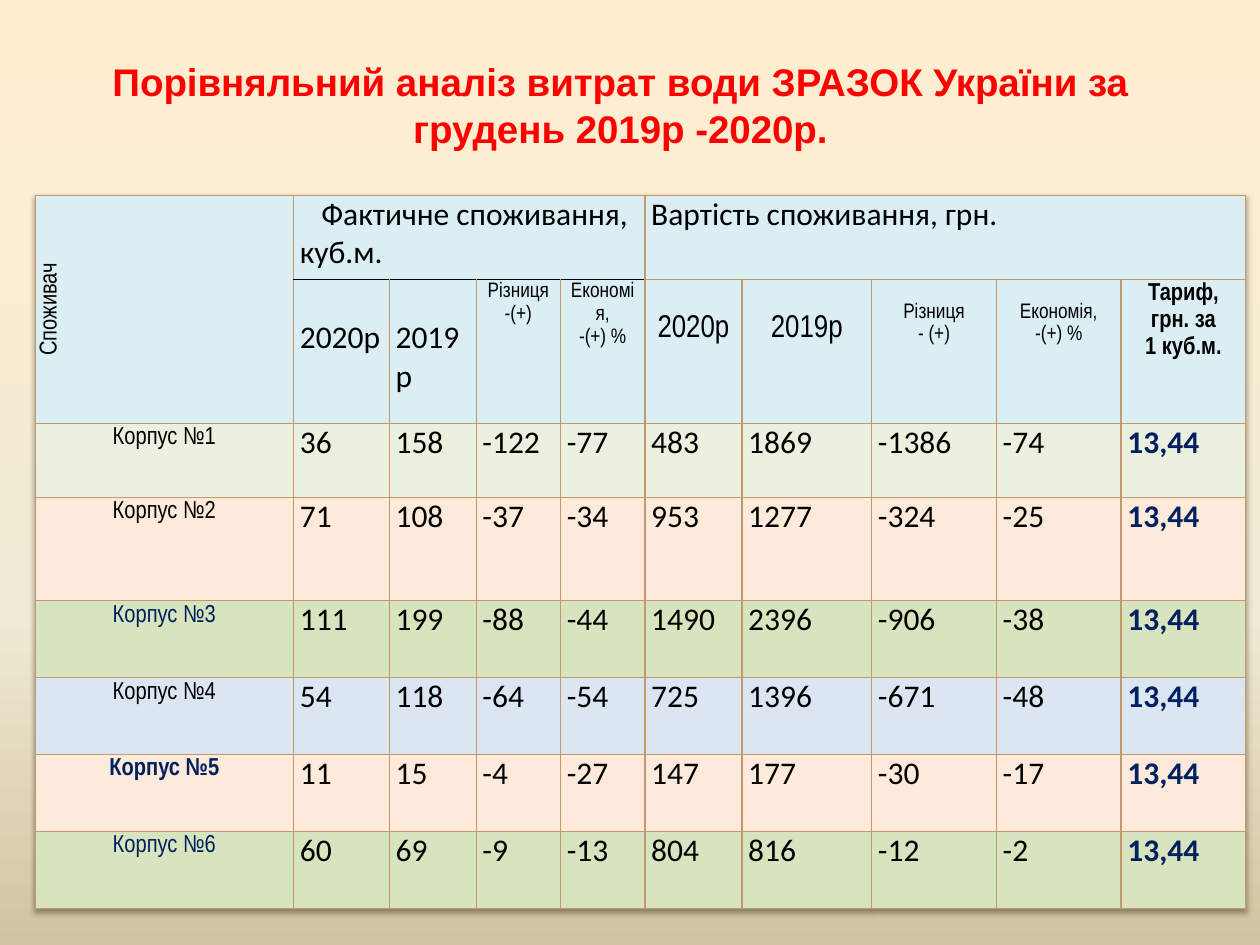
from copy import deepcopy

from lxml.etree import SubElement
from pptx import Presentation
from pptx.dml.color import RGBColor
from pptx.enum.text import MSO_ANCHOR, PP_ALIGN
from pptx.oxml import parse_xml
from pptx.oxml.ns import nsdecls, qn
from pptx.util import Inches, Pt

COLORS = {
    "title": "FF0000", "black": "000000", "navy": "002060", "border": "C3986D",
    "header": "DBEEF4", "pale_green": "EBF1DE", "peach": "FDEADA",
    "green": "D7E4BD", "blue": "DCE6F2",
}
BACKGROUND = [(0, "FFEFD1"), (0.65, "F0EBD5"), (1, "D1C39F")]
COLUMN_WIDTHS = [2.05, 0.76, 0.69, 0.67, 0.67, 0.77, 1.03, 0.99, 0.99, 0.99]
ROW_HEIGHTS = [0.67, 1.14, 0.59, 0.82] + [0.61] * 4
TARIFF = "13,44"

NARROW = {"font": "Arial Narrow", "align": PP_ALIGN.CENTER, "spacing": 1.15}
SUBHEADERS = [
    ("2020р", {"top": 0.31}),
    ("2019р", {"top": 0.31}),
    ("Різниця\n-(+)", {"size": 12, **NARROW}),
    ("Економія,\n-(+) %", {"size": 12, **NARROW}),
    ("2020р", {"top": 0.24, **NARROW}),
    ("2019р", {"top": 0.24, **NARROW}),
    ("Різниця\n- (+)", {"size": 12, "top": 0.16, **NARROW}),
    ("Економія,\n-(+) %", {"size": 12, "top": 0.16, **NARROW}),
    ("Тариф,\nгрн. за\n1 куб.м.", {"size": 14, "bold": True, **NARROW}),
]
BUILDINGS = [
    ("pale_green", "black", False, [36, 158, -122, -77, 483, 1869, -1386, -74]),
    ("peach", "black", False, [71, 108, -37, -34, 953, 1277, -324, -25]),
    ("green", "navy", False, [111, 199, -88, -44, 1490, 2396, -906, -38]),
    ("blue", "black", False, [54, 118, -64, -54, 725, 1396, -671, -48]),
    ("peach", "navy", True, [11, 15, -4, -27, 147, 177, -30, -17]),
    ("green", "navy", False, [60, 69, -9, -13, 804, 816, -12, -2]),
]


class SlideBuilder:
    def __init__(self, page):
        self.page = page

    def background(self, stops, angle):
        fill = self.page.background.fill
        fill.gradient()
        fill.gradient_angle = angle
        stop_list = next(self.page._element.iter(qn("a:gsLst")))
        while len(stop_list) < len(stops):
            stop_list.append(deepcopy(stop_list[0]))
        for stop, (position, color) in zip(fill.gradient_stops, stops):
            stop.position = position
            stop.color.rgb = RGBColor.from_string(color)

    def format_paragraph(self, paragraph, font, size, color, bold, align):
        paragraph.alignment = align
        for span in paragraph.runs:
            span.font.name = font
            span.font.size = Pt(size)
            span.font.bold = bold
            span.font.color.rgb = RGBColor.from_string(COLORS[color])

    def title(self, text, left, top, width, height):
        box = self.page.shapes.title
        box.left, box.top = Inches(left), Inches(top)
        box.width, box.height = Inches(width), Inches(height)
        frame = box.text_frame
        frame.text = text
        frame.word_wrap = True
        frame.vertical_anchor = MSO_ANCHOR.MIDDLE
        frame.margin_bottom = Inches(0.42)
        self.format_paragraph(frame.paragraphs[0], "Arial", 22, "title", True, PP_ALIGN.CENTER)

    def table(self, left, top, widths, heights):
        frame = self.page.shapes.add_table(
            len(heights), len(widths), Inches(left), Inches(top),
            Inches(sum(widths)), Inches(sum(heights)))
        table = frame.table
        table.first_row = table.horz_banding = False
        for column, width in zip(table.columns, widths):
            column.width = Inches(width)
        for row, height in zip(table.rows, heights):
            row.height = Inches(height)
        table._tbl.tblPr.insert(0, parse_xml(
            f'<a:effectLst {nsdecls("a")}><a:outerShdw blurRad="40000" dist="23000" '
            'dir="5400000" rotWithShape="0"><a:srgbClr val="000000">'
            '<a:alpha val="35000"/></a:srgbClr></a:outerShdw></a:effectLst>'))
        return table

    def borders(self, cell, black_side=None):
        properties = cell._tc.get_or_add_tcPr()
        for index, side in enumerate(("lnL", "lnR", "lnT", "lnB")):
            black = side == black_side
            line = properties.makeelement(qn(f"a:{side}"), {"w": str(Pt(1 if black else 0.79))})
            properties.insert(index, line)
            fill = SubElement(line, qn("a:solidFill"))
            color = COLORS["black" if black else "border"]
            SubElement(fill, qn("a:srgbClr"), val=color)

    def cell(self, cell, text, fill, font="Calibri", size=18, color="black", bold=False,
             align=PP_ALIGN.LEFT, spacing=None, top=0, black_side=None):
        cell.margin_left = cell.margin_right = Inches(0.05)
        cell.margin_top, cell.margin_bottom = Inches(top), 0
        cell.fill.solid()
        cell.fill.fore_color.rgb = RGBColor.from_string(COLORS[fill])
        self.borders(cell, black_side)
        cell.text_frame.text = text
        for paragraph in cell.text_frame.paragraphs:
            self.format_paragraph(paragraph, font, size, color, bold, align)
            paragraph.line_spacing = spacing


def fill_headers(builder, table):
    groups = {0: "Споживач", 1: "Фактичне споживання, куб.м.", 5: "Вартість споживання, грн."}
    for column in range(len(COLUMN_WIDTHS)):
        style = {"size": 14, **NARROW} if column == 0 else {}
        black_side = "lnB" if 1 <= column <= 4 else None
        builder.cell(table.cell(0, column), groups.get(column, ""), "header",
                     black_side=black_side, **style)
    builder.cell(table.cell(1, 0), "", "header")
    for column, (text, style) in enumerate(SUBHEADERS, 1):
        builder.cell(table.cell(1, column), text, "header",
                     black_side="lnT" if column <= 4 else None, **style)

    consumer = table.cell(0, 0)
    consumer.merge(table.cell(1, 0))
    consumer.vertical_anchor = MSO_ANCHOR.MIDDLE
    consumer._tc.get_or_add_tcPr().set("vert", "vert270")
    consumption = table.cell(0, 1)
    consumption.merge(table.cell(0, 4))
    paragraph = consumption.text_frame.paragraphs[0]
    paragraph._p.get_or_add_pPr().set("indent", str(Inches(0.17)))
    table.cell(0, 5).merge(table.cell(0, 9))


def fill_buildings(builder, table):
    for number, (fill, color, bold, values) in enumerate(BUILDINGS, 1):
        row = number + 1
        builder.cell(table.cell(row, 0), f"Корпус №{number}", fill,
                     size=14, color=color, bold=bold, **NARROW)
        for column, value in enumerate(values, 1):
            builder.cell(table.cell(row, column), str(value), fill)
        builder.cell(table.cell(row, 9), TARIFF, fill, color="navy", bold=True)


def main():
    deck = Presentation()
    deck.slide_width, deck.slide_height = Inches(10), Inches(7.5)
    builder = SlideBuilder(deck.slides.add_slide(deck.slide_layouts[5]))
    builder.background(BACKGROUND, 270)
    builder.title("Порівняльний аналіз витрат води ЗРАЗОК України за\vгрудень 2019р -2020р.",
                  0.2, 0.21, 9.45, 1.61)
    table = builder.table(0.28, 1.55, COLUMN_WIDTHS, ROW_HEIGHTS)
    fill_headers(builder, table)
    fill_buildings(builder, table)
    deck.save("out.pptx")


if __name__ == "__main__":
    main()
